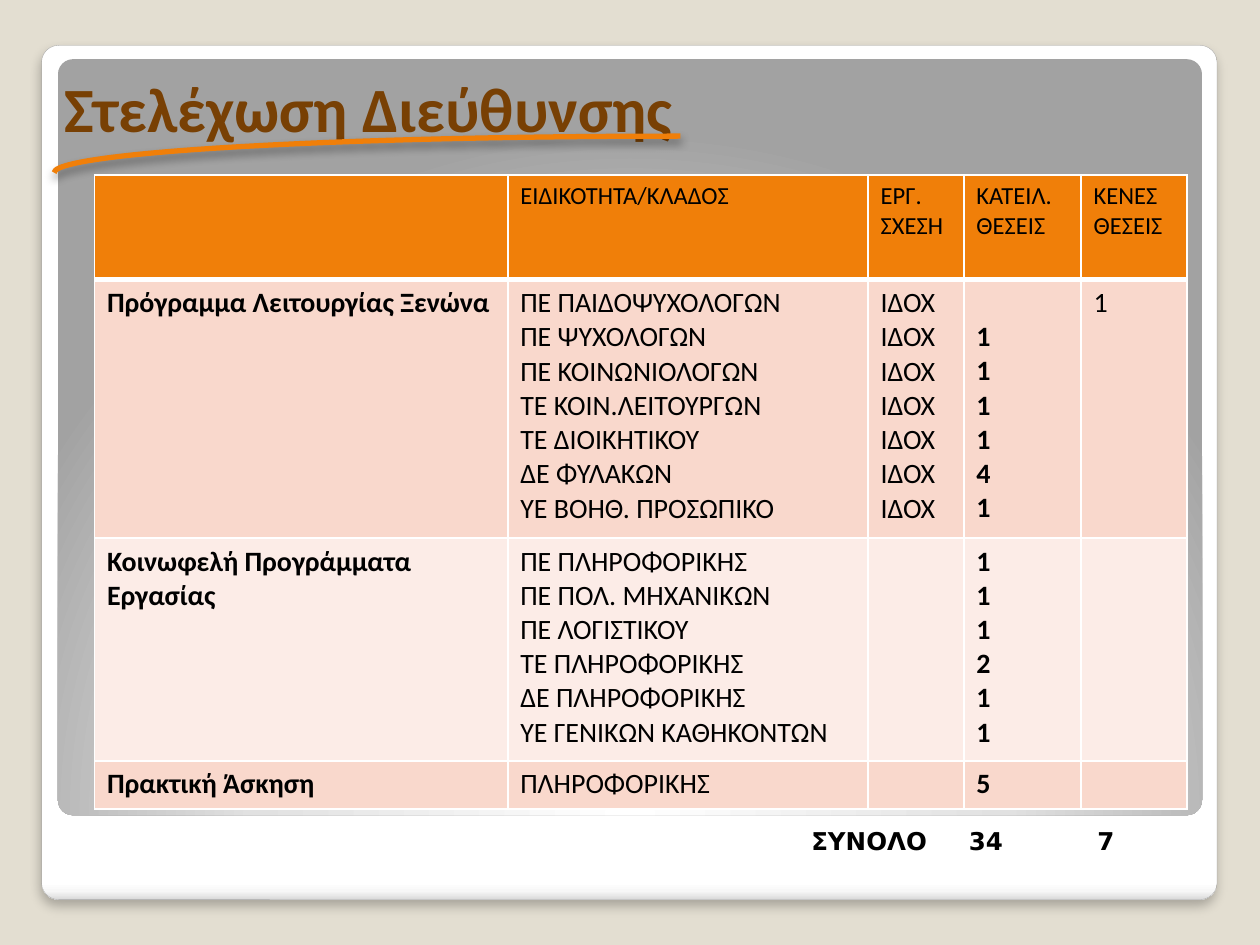
import dataclasses

import lxml.etree
import pptx
import pptx.dml.color
import pptx.enum.shapes
import pptx.enum.text
import pptx.oxml.ns
import pptx.util

COLUMNS, ROWS = 100, 75
SLIDE_WIDTH = pptx.util.Inches(10)
SLIDE_HEIGHT = pptx.util.Inches(7.5)


@dataclasses.dataclass(frozen=True)
class Theme:
    background: str = "E3DED1"
    card_edge: str = "A4A4A4"
    accent: str = "F07F09"
    title: str = "784004"
    text: str = "000000"
    border: str = "FFFFFF"
    bands: tuple = ("F9D8CC", "FCECE7")
    card_stops: tuple = ((0, "FFFFFF"), (98, "FFFFFF"), (99, "F7F7F7"), (100, "DADADA"))
    panel_stops: tuple = ((0, "FFFFFF"), (55, "E1E1E1"), (100, "A2A2A2"))
    font: str = "Calibri"
    total_font: str = "DejaVu Sans"
    title_size: int = 36
    header_size: int = 14
    body_size: int = 16
    total_size: int = 14


THEME = Theme()
COLUMN_SPANS = (32.8, 28.6, 7.6, 9.3, 8.4)
ROW_SPANS = (8.3, 20.5, 17.7, 3.8)
BOLD_COLUMNS = (0, 3)
STAFF = (
    ("", "ΕΙΔΙΚΟΤΗΤΑ/ΚΛΑΔΟΣ", "ΕΡΓ. ΣΧΕΣΗ", "ΚΑΤΕΙΛ. ΘΕΣΕΙΣ", "ΚΕΝΕΣ ΘΕΣΕΙΣ"),
    (
        "Πρόγραμμα Λειτουργίας Ξενώνα",
        "ΠΕ ΠΑΙΔΟΨΥΧΟΛΟΓΩΝ\nΠΕ ΨΥΧΟΛΟΓΩΝ\nΠΕ ΚΟΙΝΩΝΙΟΛΟΓΩΝ\nΤΕ ΚΟΙΝ.ΛΕΙΤΟΥΡΓΩΝ\n"
        "ΤΕ ΔΙΟΙΚΗΤΙΚΟΥ\nΔΕ ΦΥΛΑΚΩΝ\nΥΕ ΒΟΗΘ. ΠΡΟΣΩΠΙΚΟ",
        "\n".join(["ΙΔΟΧ"] * 7),
        "1\n1\n1\n1\n4\n1",
        "1",
    ),
    (
        "Κοινωφελή Προγράμματα Εργασίας",
        "ΠΕ ΠΛΗΡΟΦΟΡΙΚΗΣ\nΠΕ ΠΟΛ. ΜΗΧΑΝΙΚΩΝ\nΠΕ ΛΟΓΙΣΤΙΚΟΥ\nΤΕ ΠΛΗΡΟΦΟΡΙΚΗΣ\n"
        "ΔΕ ΠΛΗΡΟΦΟΡΙΚΗΣ\nΥΕ ΓΕΝΙΚΩΝ ΚΑΘΗΚΟΝΤΩΝ",
        "",
        "1\n1\n1\n2\n1\n1",
        "",
    ),
    ("Πρακτική Άσκηση", "ΠΛΗΡΟΦΟΡΙΚΗΣ", "", "5", ""),
)


def across(columns):
    return round(SLIDE_WIDTH * columns / COLUMNS)


def down(rows):
    return round(SLIDE_HEIGHT * rows / ROWS)


def place(left, top, width, height):
    return across(left), down(top), across(width), down(height)


def color(value):
    return pptx.dml.color.RGBColor.from_string(value)


def add_xml(parent, tag, **attributes):
    values = {name: str(value) for name, value in attributes.items()}
    return lxml.etree.SubElement(parent, pptx.oxml.ns.qn(tag), values)


def set_gradient(shape, stops):
    shape.fill.solid()
    properties = shape.element.spPr
    solid = properties.find(pptx.oxml.ns.qn("a:solidFill"))
    gradient = lxml.etree.Element(pptx.oxml.ns.qn("a:gradFill"), rotWithShape="1")
    stop_list = add_xml(gradient, "a:gsLst")
    for position, value in stops:
        stop = add_xml(stop_list, "a:gs", pos=position * 1000)
        add_xml(stop, "a:srgbClr", val=value)
    properties.replace(solid, gradient)
    return gradient


def add_shadow(shape, opacity, blur, distance):
    effects = shape.element.spPr.find(pptx.oxml.ns.qn("a:effectLst"))
    shadow = add_xml(effects, "a:outerShdw", blurRad=pptx.util.Pt(blur),
                     dist=pptx.util.Pt(distance), dir=90 * 60000, rotWithShape=0)
    tint = add_xml(shadow, "a:srgbClr", val=THEME.text)
    add_xml(tint, "a:alpha", val=opacity * 1000)


def add_rounded_box(slide, area, stops):
    kind = pptx.enum.shapes.MSO_SHAPE.ROUNDED_RECTANGLE
    shape = slide.shapes.add_shape(kind, *place(*area))
    shape.adjustments[0] = 0.02
    shape.shadow.inherit = False
    shape.line.fill.background()
    return shape, set_gradient(shape, stops)


def add_backdrop(slide):
    card, gradient = add_rounded_box(slide, (3.3, 3.6, 93.3, 67.8), THEME.card_stops)
    add_xml(gradient, "a:lin", ang=90 * 60000, scaled=0)
    card.line.color.rgb = color(THEME.card_edge)
    card.line.width = pptx.util.Pt(0.16)
    add_shadow(card, 25, 6, 4)
    panel, gradient = add_rounded_box(slide, (4.6, 4.7, 90.8, 60), THEME.panel_stops)
    circle = add_xml(gradient, "a:path", path="circle")
    add_xml(circle, "a:fillToRect", l=50000, t=175000, r=50000, b=-75000)


def style_paragraph(paragraph, size, bold, value=THEME.text, font=THEME.font):
    paragraph.font.name = font
    paragraph.font.size = pptx.util.Pt(size)
    paragraph.font.bold = bold
    paragraph.font.color.rgb = color(value)


def add_text(slide, area, text):
    frame = slide.shapes.add_textbox(*place(*area)).text_frame
    frame.word_wrap = True
    frame.text = text
    return frame, frame.paragraphs[0]


def add_title(slide):
    frame, paragraph = add_text(slide, (5.1, 4.4, 90, 7.1), "Στελέχωση Διεύθυνσης")
    frame.vertical_anchor = pptx.enum.text.MSO_ANCHOR.BOTTOM
    frame.margin_left = frame.margin_right = frame.margin_bottom = 0
    frame.margin_top = down(0.7)
    paragraph.line_spacing = 1.1
    paragraph.space_after = pptx.util.Pt(6)
    style_paragraph(paragraph, THEME.title_size, True, THEME.title)


def add_underline(slide):
    arc = slide.shapes.add_shape(pptx.enum.shapes.MSO_SHAPE.ARC,
                                 *place(51.1, -36, 5.8, 99.4))
    arc.rotation = 270
    arc.fill.background()
    arc.line.color.rgb = color(THEME.accent)
    arc.line.width = pptx.util.Pt(3)
    arc.shadow.inherit = False
    add_shadow(arc, 40, 5.2, 3)


def set_borders(cell, bottom_width):
    properties = cell._tc.get_or_add_tcPr()
    widths = {"a:lnL": 1, "a:lnR": 1, "a:lnT": 1, "a:lnB": bottom_width}
    for index, (tag, width) in enumerate(widths.items()):
        border = add_xml(properties, tag, w=pptx.util.Pt(width))
        add_xml(add_xml(border, "a:solidFill"), "a:srgbClr", val=THEME.border)
        properties.insert(index, border)


def fill_cell(cell, text, row, column):
    is_header = row == 0
    cell.text = text
    cell.fill.solid()
    cell.fill.fore_color.rgb = color(THEME.accent if is_header else THEME.bands[(row - 1) % 2])
    set_borders(cell, 3 if is_header else 1)
    for paragraph in cell.text_frame.paragraphs:
        style_paragraph(paragraph, THEME.header_size if is_header else THEME.body_size,
                        not is_header and column in BOLD_COLUMNS)


def add_staff_table(slide):
    area = place(7.5, 13.9, sum(COLUMN_SPANS), sum(ROW_SPANS))
    table = slide.shapes.add_table(len(ROW_SPANS), len(COLUMN_SPANS), *area).table
    table.first_row = table.horz_banding = False
    for column, span in zip(table.columns, COLUMN_SPANS):
        column.width = across(span)
    for row, span in zip(table.rows, ROW_SPANS):
        row.height = down(span)
    for row, texts in enumerate(STAFF):
        for column, text in enumerate(texts):
            fill_cell(table.cell(row, column), text, row, column)
    table.cell(1, 3).margin_top = down(3.2)


def add_total(slide):
    paragraph = add_text(slide, (63.4, 65.1, 29.1, 3.4), "ΣΥΝΟΛΟ\t34\t7")[1]
    style_paragraph(paragraph, THEME.total_size, True, font=THEME.total_font)
    properties = paragraph._p.get_or_add_pPr()
    tabs = add_xml(properties, "a:tabLst")
    properties.insert(0, tabs)
    for position in (12.5, 22.7):
        add_xml(tabs, "a:tab", pos=across(position), algn="l")


def main():
    presentation = pptx.Presentation()
    presentation.slide_width = SLIDE_WIDTH
    presentation.slide_height = SLIDE_HEIGHT
    slide = presentation.slides.add_slide(presentation.slide_layouts[6])
    slide.background.fill.solid()
    slide.background.fill.fore_color.rgb = color(THEME.background)
    add_backdrop(slide)
    add_title(slide)
    add_underline(slide)
    add_staff_table(slide)
    add_total(slide)
    presentation.save("out.pptx")


if __name__ == "__main__":
    main()
